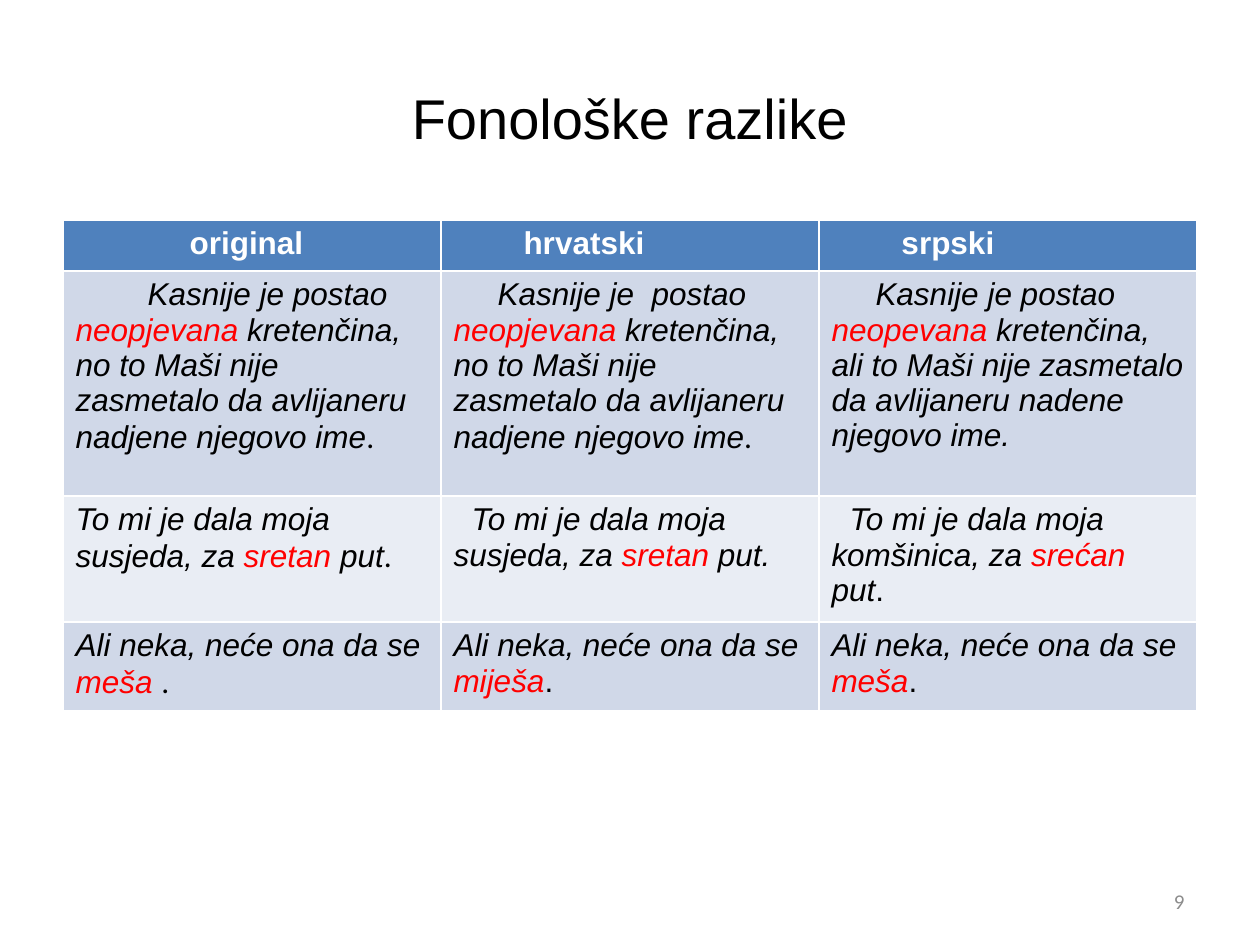
from pptx import Presentation
from pptx.dml.color import RGBColor as RGB
from pptx.enum.text import MSO_ANCHOR as Anchor, PP_ALIGN as Align
from pptx.util import Emu, Pt

PX = 914400 // 126
BLACK, WHITE, RED, GREY = "000000", "FFFFFF", "FF0000", "8C8C8C"
BLUE, DARK, LIGHT = "4F81BD", "D0D8E8", "E9EDF4"


def add_run(para, text, size, color, font="Arial", bold=False, italic=False):
    run = para.add_run()
    run.text = text
    run.font.size, run.font.name = Pt(size), font
    run.font.bold, run.font.italic = bold, italic
    run.font.color.rgb = RGB.from_string(color)


def add_box(left, top, width, height, align):
    box = slide.shapes.add_textbox(*[Emu(n * PX) for n in (left, top, width, height)])
    frame = box.text_frame
    frame.word_wrap = True
    frame.vertical_anchor = Anchor.MIDDLE
    frame.paragraphs[0].alignment = align
    return frame.paragraphs[0]


deck = Presentation()
deck.slide_width, deck.slide_height = Emu(1260 * PX), Emu(945 * PX)
slide = deck.slides.add_slide(deck.slide_layouts[6])

# Title
add_run(add_box(63, 38, 1134, 158, Align.CENTER), "Fonološke razlike", 32, BLACK)

# Table text: first-line indent, lead, red word, rest, font of the full stop
heads = [("original", 114), ("hrvatski", 70), ("srpski", 70)]
body = [
    [(72, "Kasnije je postao ", "neopjevana",
      " kretenčina, no to Maši nije zasmetalo da avlijaneru nadjene njegovo ime", "Calibri"),
     (44, "Kasnije je  postao ", "neopjevana ",
      "kretenčina, no to Maši nije zasmetalo da avlijaneru nadjene njegovo ime", "Calibri"),
     (44, "Kasnije je postao ", "neopevana",
      " kretenčina, ali to Maši nije zasmetalo da avlijaneru nadene njegovo ime.", None)],
    [(0, "To mi je dala moja susjeda, za ", "sretan ", "put", "Calibri"),
     (18, "To mi je dala moja susjeda, za", " sretan ", "put.", None),
     (18, "To mi je dala moja komšinica, za ", "srećan ", "put", "Arial")],
    [(0, "Ali neka, neće ona da se ", "meša ", "", "Calibri"),
     (0, "Ali neka, neće ona da se ", "miješa", "", "Arial"),
     (0, "Ali neka, neće ona da se ", "meša", "", "Arial")],
]

# Table grid
highs = [51, 225, 118, 85]
grid = slide.shapes.add_table(4, 3, Emu(63 * PX), Emu(220 * PX),
                              Emu(1134 * PX), Emu(sum(highs) * PX)).table
for row, high in zip(grid.rows, highs):
    row.height = Emu(high * PX)
for col in grid.columns:
    col.width = Emu(378 * PX)

# Table cells
for r, fill in enumerate([BLUE, DARK, LIGHT, DARK]):
    for c in range(3):
        cell = grid.cell(r, c)
        cell.fill.solid()
        cell.fill.fore_color.rgb = RGB.from_string(fill)
        para = cell.text_frame.paragraphs[0]
        if r == 0:
            text, indent = heads[c]
            add_run(para, text, 18, WHITE, bold=True)
        else:
            indent, lead, word, rest, stop = body[r - 1][c]
            for text, color in [(lead, BLACK), (word, RED), (rest, BLACK)]:
                if text:
                    add_run(para, text, 18, color, italic=True)
            if stop:
                add_run(para, ".", 18, BLACK, stop)
        props = para._p.get_or_add_pPr()
        props.set("marL", "0")
        props.set("indent", str(indent * PX))

# Slide number
add_run(add_box(903, 876, 294, 50, Align.RIGHT), "9", 12, GREY, "Calibri")

deck.save("out.pptx")
